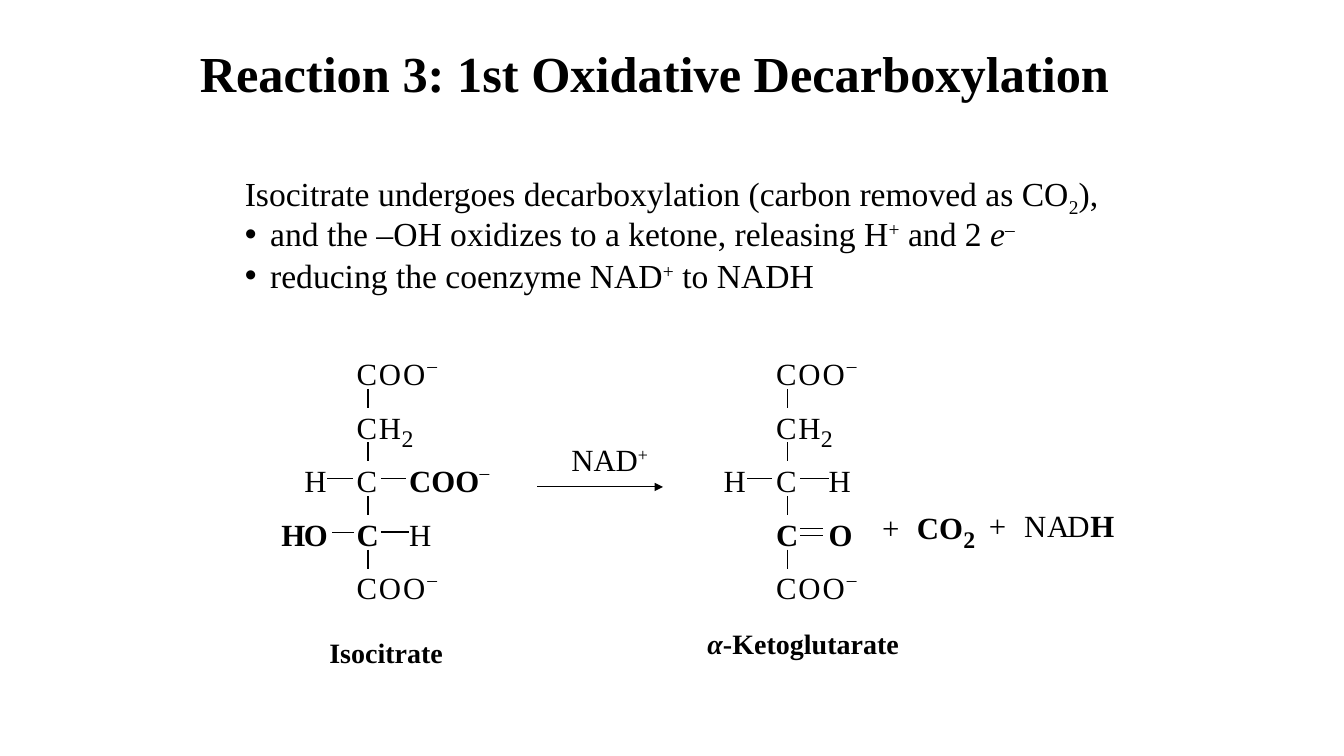
from dataclasses import dataclass

from lxml import etree
from pptx import Presentation
from pptx.dml.color import RGBColor
from pptx.enum.shapes import MSO_CONNECTOR
from pptx.enum.text import MSO_ANCHOR, MSO_AUTO_SIZE, PP_ALIGN
from pptx.oxml.ns import qn
from pptx.shapes.connector import Connector
from pptx.shapes.shapetree import GroupShapes
from pptx.slide import Slide
from pptx.text.text import TextFrame, _Paragraph
from pptx.util import Cm, Pt

STRAIGHT = MSO_CONNECTOR.STRAIGHT
MIDDLE, TOP = MSO_ANCHOR.MIDDLE, MSO_ANCHOR.TOP
GROW, FIXED = MSO_AUTO_SIZE.SHAPE_TO_FIT_TEXT, MSO_AUTO_SIZE.NONE
LEFT = PP_ALIGN.LEFT
FONT, BLACK = "Times New Roman", "000000"

GLYPH_WIDTHS = {"C": 0.56, "O": 0.61, "H": 0.57, "N": 0.58, "A": 0.51, "D": 0.58,
                "+": 0.43, "2": 0.3, "–": 0.28}
FIRST_ROW, ROW_STEP = 8.94, 1.35
ROW_COUNT = 5
CARBON_LEFT, SIDE_LEFT = -0.28, 1.04
BOND_TOP, BOND_LENGTH, BOND_MIDDLE = 0.86, 0.48, 0.42


@dataclass
class Span:
    """A stretch of text in one format."""
    text: str
    baseline: int = 0
    bold: bool = False
    italic: bool = False


@dataclass
class Formula:
    """Letters set one by one, from a left edge and a row or top."""
    letters: str
    left: float
    top: float
    bold: bool = False


@dataclass
class Bond:
    """A horizontal bond beside the carbon chain."""
    row: int
    start: float
    end: float
    drop: float = BOND_MIDDLE
    weight: float = 1


@dataclass
class Molecule:
    """A carbon chain with its side groups."""
    axis: float
    sides: list[Formula]
    bonds: list[Bond]


@dataclass
class Label:
    """A line of text in a box."""
    left: float
    top: float
    width: float
    height: float
    size: float
    spans: list[Span]
    wrap: bool = True


CHAIN = [
    Formula("COO–", CARBON_LEFT, 0),
    Formula("CH2", CARBON_LEFT, 1),
    Formula("C", CARBON_LEFT, 2),
    Formula("C", CARBON_LEFT, 3, True),
    Formula("COO–", CARBON_LEFT, 4),
    Formula("H", -1.6, 2),
]
MOLECULES = [
    Molecule(9.27,
             [Formula("COO–", SIDE_LEFT, 2, True), Formula("HO", -2.18, 3, True),
              Formula("H", SIDE_LEFT, 3)],
             [Bond(2, 0.33, 0.97), Bond(3, -0.36, -0.91, weight=0.5), Bond(3, 0.33, 1.04)]),
    Molecule(19.84,
             [Formula("H", SIDE_LEFT, 2), Formula("O", SIDE_LEFT, 3, True)],
             [Bond(2, 0.33, 1.04), Bond(3, 0.33, 0.91, 0.33, 0.5),
              Bond(3, 0.33, 0.91, 0.5, 0.5)]),
]
BY_PRODUCTS = [
    Formula("+", 22.23, 12.83),
    Formula("CO2", 23.11, 12.83, True),
    Formula("+", 24.92, 12.78),
    Formula("NAD", 25.81, 12.78),
    Formula("H", 27.48, 12.78, True),
]
LABELS = [
    Label(17.58, 15.67, 6.55, 1.09, 20,
          [Span("α", bold=True, italic=True), Span("-Ketoglutarate", bold=True)]),
    Label(8.05, 15.88, 6.55, 1.09, 20, [Span("Isocitrate", bold=True)]),
    Label(14.15, 10.97, 2.49, 1.19, 22, [Span("NAD"), Span("+", 30)], False),
]
STATEMENTS = [
    [Span("Isocitrate undergoes decarboxylation (carbon removed as CO"), Span("2", -25),
     Span("),")],
    [Span("and the –OH oxidizes to a ketone, releasing H"), Span("+", 30), Span(" and 2 "),
     Span("e", italic=True), Span("–", 30)],
    [Span("reducing the coenzyme NAD"), Span("+", 30), Span(" to NADH")],
]


def colour(value: str) -> RGBColor:
    """Turn a hex string into a colour."""
    return RGBColor.from_string(value)


def write_spans(para: _Paragraph, spans: list[Span], size: float) -> None:
    """Fill a paragraph with formatted spans."""
    para.alignment = LEFT
    for span in spans:
        run = para.add_run()
        run.text = span.text
        font = run.font
        font.name, font.size = FONT, Pt(size)
        font.bold, font.italic = span.bold, span.italic
        font.color.rgb = colour(BLACK)
        if span.baseline:
            run._r.get_or_add_rPr().set("baseline", str(span.baseline * 1000))


def add_label(shapes: GroupShapes, label: Label, inset: bool = True) -> TextFrame:
    """Draw a box that fits its line of text."""
    box = shapes.add_textbox(Cm(label.left), Cm(label.top), Cm(label.width), Cm(label.height))
    frame = box.text_frame
    frame.word_wrap, frame.auto_size = label.wrap, GROW
    if not inset:
        frame.margin_left = frame.margin_top = frame.margin_right = frame.margin_bottom = 0
    write_spans(frame.paragraphs[0], label.spans, label.size)
    return frame


def add_line(shapes: GroupShapes, x1: float, y1: float, x2: float, y2: float,
             weight: float = 1) -> Connector:
    """Draw a plain black line."""
    line = shapes.add_connector(STRAIGHT, Cm(x1), Cm(y1), Cm(x2), Cm(y2))
    line.line.color.rgb = colour(BLACK)
    line.line.width = Pt(weight)
    etree.SubElement(line._element.spPr, qn("a:effectLst"))
    return line


def add_formula(shapes: GroupShapes, formula: Formula, left: float, top: float) -> None:
    """Set the letters of a formula side by side."""
    for letter in formula.letters:
        width = GLYPH_WIDTHS[letter]
        span = Span(letter, bold=formula.bold)
        drop, height, size = 0.0, 0.94, 22
        if letter == "2":
            drop, height, size = 0.38, 0.74, 17
        elif letter == "–":
            drop, height, size = -0.15, 0.69, 24
            span = Span(letter, 30)
        add_label(shapes, Label(left, top + drop, width, height, size, [span], False), False)
        left += width


def add_molecule(slide: Slide, molecule: Molecule) -> None:
    """Draw a molecule as one group."""
    shapes = slide.shapes.add_group_shape().shapes
    axis = molecule.axis
    for row in range(ROW_COUNT - 1):
        top = FIRST_ROW + row * ROW_STEP + BOND_TOP
        add_line(shapes, axis, top, axis, top + BOND_LENGTH)
    for bond in [Bond(2, -0.38, -1.02), *molecule.bonds]:
        height = FIRST_ROW + bond.row * ROW_STEP + bond.drop
        add_line(shapes, axis + bond.start, height, axis + bond.end, height, bond.weight)
    for formula in CHAIN + molecule.sides:
        add_formula(shapes, formula, axis + formula.left, FIRST_ROW + formula.top * ROW_STEP)


def add_title(slide: Slide) -> None:
    """Place and format the slide title."""
    title = slide.shapes.title
    title.left, title.top, title.width, title.height = Cm(4.78), Cm(0.64), Cm(24), Cm(2.54)
    frame = title.text_frame
    frame.auto_size, frame.vertical_anchor, frame.word_wrap = FIXED, MIDDLE, True
    para = frame.paragraphs[0]
    para.line_spacing = 0.9
    write_spans(para, [Span("Reaction 3: 1st Oxidative Decarboxylation", bold=True)], 36)


def add_statements(slide: Slide) -> None:
    """Write the opening line and its bullets."""
    frame = slide.shapes.add_textbox(Cm(5.92), Cm(4.24), Cm(22.66), Cm(12.27)).text_frame
    frame.word_wrap, frame.vertical_anchor = True, TOP
    for index, spans in enumerate(STATEMENTS):
        para = frame.add_paragraph() if index else frame.paragraphs[0]
        write_spans(para, spans, 24)
        para.line_spacing = 0.9
        para.space_before = Pt(2.4 if index else 10)
        para.space_after = Pt(1.2 if index else 0)
        properties = para._p.get_or_add_pPr()
        properties.set("marL", str(Cm(0.64)))
        properties.set("indent", str(-Cm(0.64)))
        if index:
            etree.SubElement(properties, qn("a:buFont"), typeface="Arial")
            etree.SubElement(properties, qn("a:buChar"), char="•")


def main() -> None:
    """Build the slide and save the deck."""
    deck = Presentation()
    deck.slide_width, deck.slide_height = Cm(33.87), Cm(19.05)
    slide = deck.slides.add_slide(deck.slide_layouts[5])
    add_title(slide)
    add_statements(slide)
    for label in LABELS:
        add_label(slide.shapes, label)
    arrow = add_line(slide.shapes, 13.54, 12.27, 16.71, 12.27, 0.75)
    etree.SubElement(arrow.line._get_or_add_ln(), qn("a:tailEnd"), type="triangle")
    for molecule in MOLECULES:
        add_molecule(slide, molecule)
    by_products = slide.shapes.add_group_shape().shapes
    for formula in BY_PRODUCTS:
        add_formula(by_products, formula, formula.left, formula.top)
    deck.save("out.pptx")


if __name__ == "__main__":
    main()
